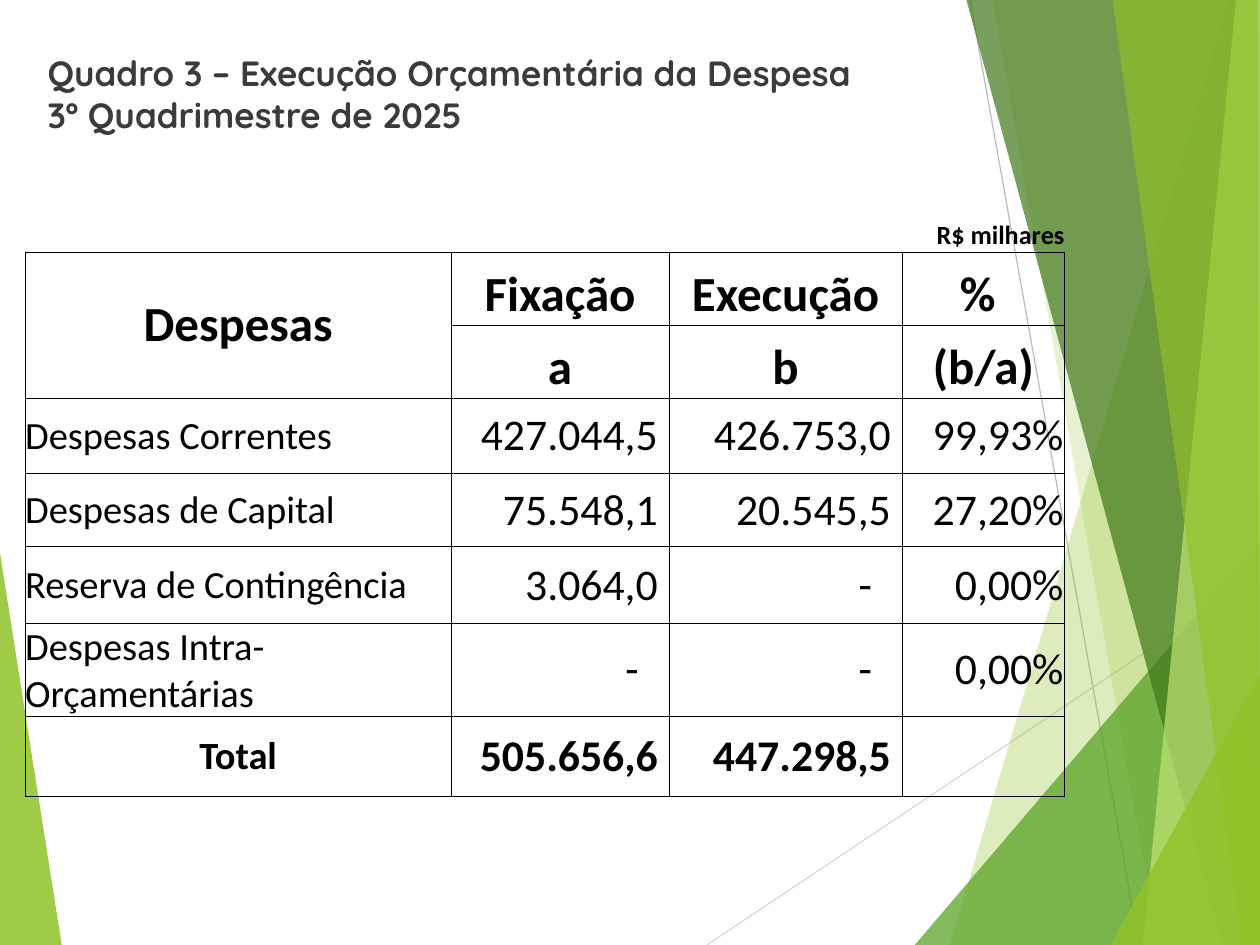
from lxml.etree import SubElement
from pptx import Presentation
from pptx.dml.color import RGBColor
from pptx.enum.shapes import MSO_CONNECTOR
from pptx.enum.text import MSO_ANCHOR, PP_ALIGN
from pptx.oxml.ns import qn
from pptx.util import Inches, Pt

WIDE, HIGH = 10, 7.5
HUES = {"lime": "90C226", "leaf": "54A021", "moss": "3F7819", "pale": "C0E474",
        "mist": "D9D9D9", "gray": "BFBFBF", "ink": "3B3B3B", "black": "000000"}

TITLE = "Quadro 3 – Execução Orçamentária da Despesa\n3º Quadrimestre de 2025"
UNIT = "R$ milhares"
HEADS = [("Despesas", "Fixação", "Execução", "%"),
         ("", "a", "b", "(b/a)")]
ITEMS = [("Despesas Correntes", "427.044,5", "426.753,0", "99,93%"),
         ("Despesas de Capital", "75.548,1", "20.545,5", "27,20%"),
         ("Reserva de Contingência", "3.064,0", "-", "0,00%"),
         ("Despesas Intra-Orçamentárias", "-", "-", "0,00%"),
         ("Total", "505.656,6", "447.298,5", "")]
COLS = [3.38, 0.12, 1.61, 0.9, 0.95, 1.29]
ROWS = [0.83, 0.58, 0.58, 0.6, 0.58, 0.61, 0.65, 0.64]
SLOTS = [0, 1, 3, 5]

LINES = [((5.61, HIGH), (WIDE, 4.57), "mist"), ((7.7, 0), (9.04, HIGH), "gray")]
EDGE = [(WIDE, HIGH), (WIDE, 0)]
SHARDS = [
    ("lime", 85, [(0, 4.39), (0.49, HIGH), (0, HIGH)]),
    ("lime", 30, [(9.75, 0), (7.54, HIGH), *EDGE]),
    ("lime", 20, [(7.88, 0), (9.19, HIGH), *EDGE]),
    ("leaf", 72, [(7.26, HIGH), (WIDE, 4.29), (WIDE, HIGH)]),
    ("moss", 70, [(7.67, 0), (9.7, HIGH), *EDGE]),
    ("pale", 70, [(9.81, 0), (9.07, HIGH), *EDGE]),
    ("lime", 65, [(8.83, 0), (9.86, HIGH), (WIDE, HIGH), (9.98, 0)]),
    ("lime", 80, [(8.81, HIGH), (WIDE, 5.35), (WIDE, HIGH)]),
]


def tint(name):
    return RGBColor.from_string(HUES[name])


def put(thing, form):
    for key, val in form.items():
        setattr(thing, key, val)


def shard(slide, name, share, spots):
    spots = [(Inches(x), Inches(y)) for x, y in spots]
    pen = slide.shapes.build_freeform(*spots[0])
    pen.add_line_segments(spots[1:], close=True)
    form = pen.convert_to_shape()
    form.shadow.inherit = False
    form.line.fill.background()
    form.fill.solid()
    form.fill.fore_color.rgb = tint(name)
    hue = form.fill._xPr.find(qn("a:solidFill"))[0]
    SubElement(hue, qn("a:alpha"), val=str(share * 1000))


def streak(slide, start, end, name):
    spots = [Inches(n) for n in (*start, *end)]
    line = slide.shapes.add_connector(MSO_CONNECTOR.STRAIGHT, *spots)
    line.line.width = Pt(0.75)
    line.line.color.rgb = tint(name)
    SubElement(line._element.spPr, qn("a:effectLst"))


def write(part, text, size, face, name, bold, align):
    part.text = text
    part.alignment = align
    put(part.font, {"size": Pt(size), "name": face, "bold": bold})
    part.font.color.rgb = tint(name)


def frame(cell, sides):
    box = cell._tc.get_or_add_tcPr()
    for side in "LRTB":
        line = SubElement(box, qn("a:ln" + side), w=str(Pt(0.5)))
        if side in sides:
            fill = SubElement(line, qn("a:solidFill"))
            SubElement(fill, qn("a:srgbClr"), val=HUES["black"])
        else:
            SubElement(line, qn("a:noFill"))
    cell.fill.background()


def enter(cell, text, size, bold, align, low=False, gap=0):
    put(cell, {"vertical_anchor": MSO_ANCHOR.BOTTOM if low else MSO_ANCHOR.MIDDLE,
               "margin_right": Inches(gap)})
    write(cell.text_frame.paragraphs[0], text, size, "Calibri", "black", bold, align)


def chart(slide):
    grid = slide.shapes.add_table(len(ROWS), len(COLS), Inches(0.2), Inches(1.17),
                                  Inches(sum(COLS)), Inches(sum(ROWS))).table
    put(grid, {"first_row": False, "horz_banding": False})
    for col, size in zip(grid.columns, COLS):
        col.width = Inches(size)
    for row, size in zip(grid.rows, ROWS):
        row.height = Inches(size)
    for r in range(len(ROWS)):
        for c in range(len(COLS)):
            cell = grid.cell(r, c)
            put(cell, dict.fromkeys(("margin_left", "margin_right",
                                     "margin_top", "margin_bottom"), 0))
            frame(cell, "LRTB" if r else "B")
        if r:
            for c in SLOTS[1:3]:
                grid.cell(r, c).merge(grid.cell(r, c + 1))
    grid.cell(1, 0).merge(grid.cell(2, 0))

    enter(grid.cell(0, 5), UNIT, 15, True, PP_ALIGN.RIGHT, low=True)
    for r, heads in enumerate(HEADS, 1):
        for c, text in zip(SLOTS, heads):
            if text:
                enter(grid.cell(r, c), text, 28, True, PP_ALIGN.CENTER,
                      low=c > 0, gap=0.09 if text == "%" else 0)
    for r, (label, *sums) in enumerate(ITEMS, 3):
        last = label == "Total"
        enter(grid.cell(r, 0), label, 22, last,
              PP_ALIGN.CENTER if last else PP_ALIGN.LEFT)
        for c, text in zip(SLOTS[1:], sums):
            gap = 0.01 if c == 5 else 0.24 if text == "-" else 0.09
            if text:
                enter(grid.cell(r, c), text, 25, last, PP_ALIGN.RIGHT, gap=gap)


def main():
    deck = Presentation()
    put(deck, {"slide_width": Inches(WIDE), "slide_height": Inches(HIGH)})
    slide = deck.slides.add_slide(deck.slide_layouts[6])
    shard(slide, *SHARDS[0])
    for line in LINES:
        streak(slide, *line)
    for part in SHARDS[1:]:
        shard(slide, *part)
    box = slide.shapes.add_textbox(Inches(0.28), Inches(0.36), Inches(8.5), Inches(0.74))
    put(box.text_frame, {"word_wrap": True, "vertical_anchor": MSO_ANCHOR.TOP})
    write(box.text_frame.paragraphs[0], TITLE, 20, "Quicksand", "ink", True, PP_ALIGN.LEFT)
    chart(slide)
    deck.save("out.pptx")


if __name__ == "__main__":
    main()
